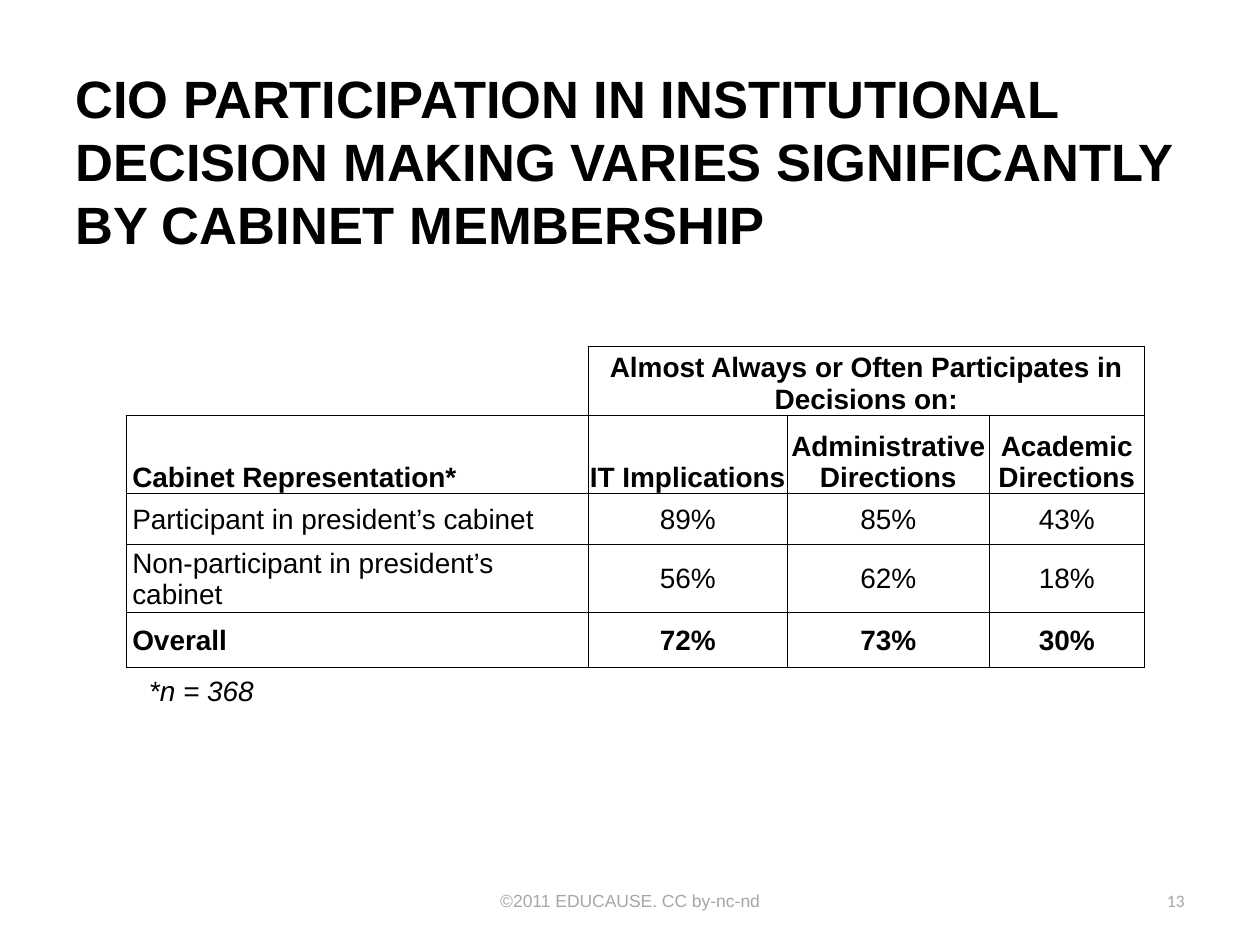
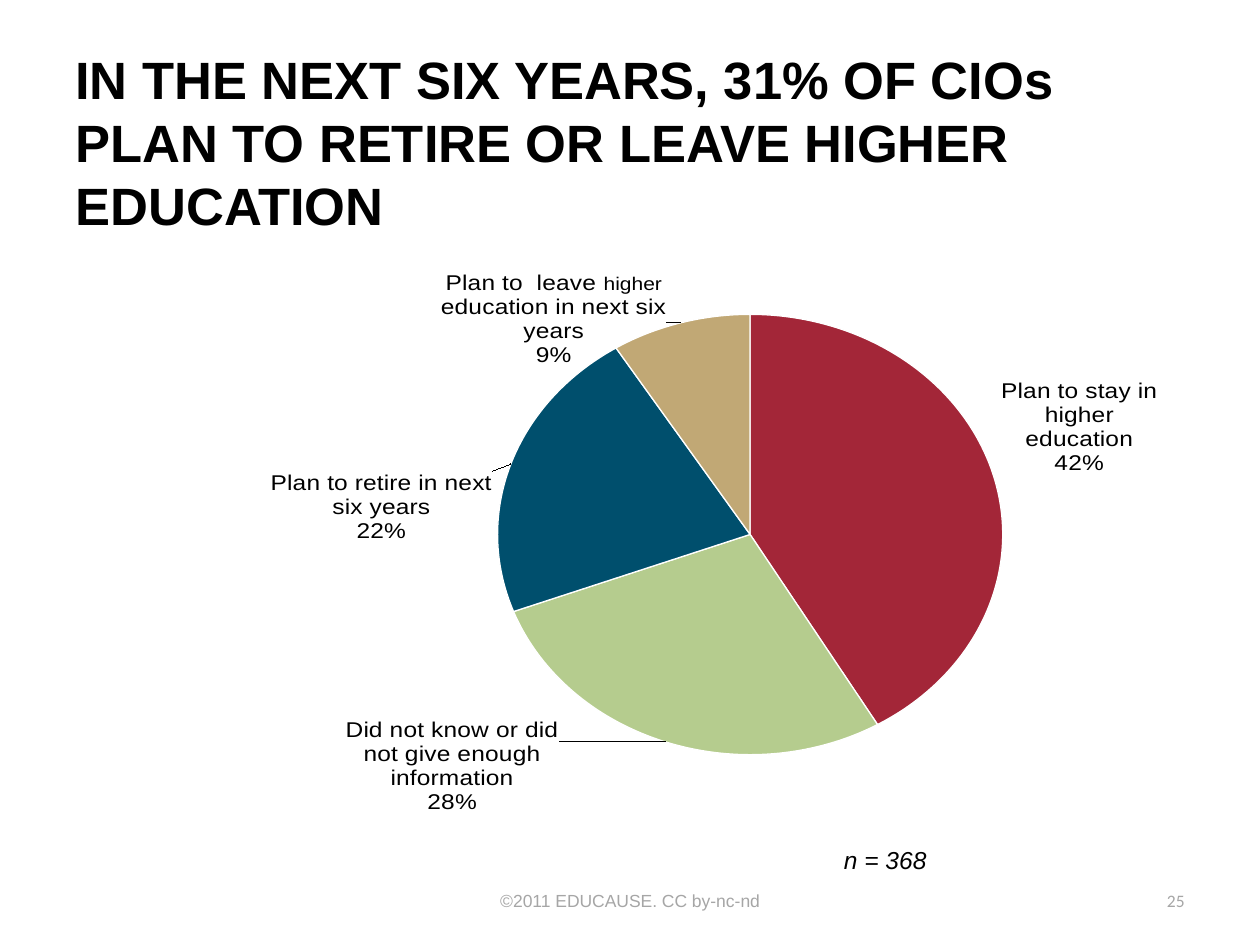
from lxml.etree import SubElement
from pptx import Presentation
from pptx.chart.data import CategoryChartData
from pptx.dml.color import RGBColor
from pptx.enum.chart import XL_CHART_TYPE, XL_LABEL_POSITION
from pptx.enum.text import MSO_ANCHOR as Anchor, PP_ALIGN as Align
from pptx.oxml.ns import qn
from pptx.util import Inches, Pt

BLACK = RGBColor(0x00, 0x00, 0x00)
WHITE = RGBColor(0xFF, 0xFF, 0xFF)
GREY = RGBColor(0xA6, 0xA6, 0xA6)
RED = RGBColor(0xA3, 0x26, 0x38)
GREEN = RGBColor(0xB5, 0xCC, 0x8E)
BLUE = RGBColor(0x00, 0x4F, 0x6D)
TAN = RGBColor(0xC1, 0xA8, 0x75)

COLUMNS, ROWS = 120, 90
COPYRIGHT = "©2011 EDUCAUSE. CC by-nc-nd"


def style(font, size=16, color=BLACK, name="Arial", bold=False, italic=False):
    font.name, font.size = name, Pt(size)
    font.bold, font.italic = bold, italic
    font.color.rgb = color


def write(frame, text, align=Align.LEFT, anchor=Anchor.TOP, **look):
    """Put one paragraph of text into a frame; look goes to style()."""
    frame.word_wrap = True
    frame.vertical_anchor = anchor
    para = frame.paragraphs[0]
    para.alignment = align
    span = para.add_run()
    span.text = text
    style(span.font, **look)


def draw_borders(cell, sides):
    """Draw thin black lines on the given sides (of "LRTB"), none on the rest."""
    properties = cell._tc.get_or_add_tcPr()
    for side in "LRTB":
        line = SubElement(properties, qn(f"a:ln{side}"), w=str(Pt(0.5)))
        if side in sides:
            fill = SubElement(line, qn("a:solidFill"))
            SubElement(fill, qn("a:srgbClr"), val=str(BLACK))
        else:
            SubElement(line, qn("a:noFill"))


def set_layout(parent, index, settings):
    """Give a chart part a manual layout, as its child at index."""
    for old in parent.findall(qn("c:layout")):
        parent.remove(old)
    layout = SubElement(parent, qn("c:layout"))
    manual = SubElement(layout, qn("c:manualLayout"))
    for key, value in settings.items():
        SubElement(manual, qn(f"c:{key}"), val=str(value))
    parent.insert(index, layout)


def shift_label(series, index, x, y):
    """Move one slice's label by shares of the chart's size and return the label."""
    label = series.points[index].data_label
    label.position = XL_LABEL_POSITION.OUTSIDE_END
    element = label._dLbl
    set_layout(element, 1, dict(x=x, y=y))
    for flag, value in (("showVal", "0"), ("showCatName", "1"), ("showPercent", "1")):
        element.find(qn(f"c:{flag}")).set("val", value)
    return label


class Deck:
    """Holds the presentation, its grid and the current page."""

    def __init__(self):
        self.file = Presentation()
        self.file.slide_width, self.file.slide_height = Inches(10), Inches(7.5)
        self.column = self.file.slide_width / COLUMNS
        self.row = self.file.slide_height / ROWS

    def area(self, left, top, width, height):
        return (round(left * self.column), round(top * self.row),
                round(width * self.column), round(height * self.row))

    def start_page(self, title, title_area, number):
        self.page = self.file.slides.add_slide(self.file.slide_layouts[6])
        self.text(title_area, title, size=30, bold=True, anchor=Anchor.MIDDLE)
        footer = dict(size=10, color=GREY, anchor=Anchor.MIDDLE)
        self.text((41, 83.4, 38, 4.8), COPYRIGHT, align=Align.CENTER, **footer)
        self.text((86, 83.4, 28, 4.8), str(number), align=Align.RIGHT, name="Calibri", **footer)

    def text(self, area, text, **look):
        box = self.page.shapes.add_textbox(*self.area(*area))
        write(box.text_frame, text, **look)

    def table(self, left, top, widths, heights, records, bold_rows, bottom_rows):
        """Build a bordered table whose top row is an empty corner and one merged heading."""
        area = self.area(left, top, sum(widths), sum(heights))
        table = self.page.shapes.add_table(len(heights), len(widths), *area).table
        table.first_row = table.horz_banding = False
        for column, width in zip(table.columns, widths):
            column.width = round(width * self.column)
        for row, height in zip(table.rows, heights):
            row.height = round(height * self.row)
        table.cell(0, 1).merge(table.cell(0, len(widths) - 1))
        for r, record in enumerate(records):
            for c, value in enumerate(record):
                cell = table.cell(r, c)
                cell.margin_left = Inches(0.01 if c else 0.05)
                cell.margin_right = cell.margin_top = Inches(0.01)
                cell.margin_bottom = Pt(0.1)
                draw_borders(cell, "LRTB" if r or c else "RB")
                cell.fill.background()
                if value:
                    write(cell.text_frame, value, bold=r in bold_rows,
                          align=Align.CENTER if c else Align.LEFT)
                cell.vertical_anchor = Anchor.BOTTOM if r in bottom_rows else Anchor.MIDDLE

    def pie(self, area, plot_area, slices):
        """Draw slices of (category, value, colour) and return the plot's series."""
        data = CategoryChartData()
        data.categories = [category for category, _, _ in slices]
        data.add_series("Series 1", [value for _, value, _ in slices])
        chart = self.page.shapes.add_chart(XL_CHART_TYPE.PIE, *self.area(*area), data).chart
        chart.has_legend = chart.has_title = False
        style(chart.font)
        plot = chart.plots[0]
        plot.vary_by_categories = True
        set_layout(chart._chartSpace.chart.plotArea, 0,
                   dict(layoutTarget="inner", xMode="edge", yMode="edge",
                        **dict(zip("xywh", plot_area))))
        series = plot.series[0]
        for index, (_, _, color) in enumerate(slices):
            shape = series.points[index].format
            shape.fill.solid()
            shape.fill.fore_color.rgb = color
            shape.line.color.rgb = WHITE
            shape.line.width = Pt(0.75)
        labels = series.data_labels
        labels.show_category_name = labels.show_percentage = True
        labels.show_value = False
        labels.number_format, labels.number_format_is_linked = "0%", False
        labels.position = XL_LABEL_POSITION.OUTSIDE_END
        style(labels.font, size=14)
        return series


def add_participation_page(deck):
    deck.start_page("CIO PARTICIPATION IN INSTITUTIONAL DECISION MAKING VARIES "
                    "SIGNIFICANTLY BY CABINET MEMBERSHIP", (6, 6.75, 108, 17), 13)
    deck.table(12, 33, (44, 19, 19.2, 14.8), (6, 7.5, 4.8, 5.2, 5.2), [
        ("", "Almost Always or Often Participates in Decisions on:", "", ""),
        ("Cabinet Representation*", "IT Implications",
         "Administrative Directions", "Academic Directions"),
        ("Participant in president’s cabinet", "89%", "85%", "43%"),
        ("Non-participant in president’s cabinet", "56%", "62%", "18%"),
        ("Overall", "72%", "73%", "30%"),
    ], bold_rows=(0, 1, 4), bottom_rows=(0, 1))
    deck.text((13, 63.6, 26, 4.4), "*n = 368", italic=True)


def add_retirement_page(deck):
    deck.start_page("IN THE NEXT SIX YEARS, 31% OF CIOs PLAN TO RETIRE OR LEAVE "
                    "HIGHER EDUCATION", (6, 6, 110, 15), 25)
    series = deck.pie((6, 21, 110, 59.4), (0.37, 0.08, 0.45, 0.81), [
        ("Plan to stay in higher education", 42, RED),
        ("Did not know or did not give enough information", 28, GREEN),
        ("Plan to retire in next six years", 22, BLUE),
        ("Plan to  leave higher education in next six years", 9, TAN),
    ])
    for index, x, y in ((1, -0.09, -0.02), (2, -0.01, 0.15)):
        style(shift_label(series, index, x, y).font, size=14)
    leaving = shift_label(series, 3, -0.01, 0.04).text_frame
    first, share = leaving.paragraphs[0], leaving.add_paragraph()
    for para, text, size in ((first, "Plan to  leave ", 14), (first, "higher", 12),
                             (first, " education in next six years", 14), (share, "9%", 14)):
        span = para.add_run()
        span.text = text
        style(span.font, size=size)
    deck.text((79.2, 79.9, 12, 4), "n = 368", size=14, italic=True)


def main():
    deck = Deck()
    add_participation_page(deck)
    add_retirement_page(deck)
    deck.file.save("out.pptx")


if __name__ == "__main__":
    main()
